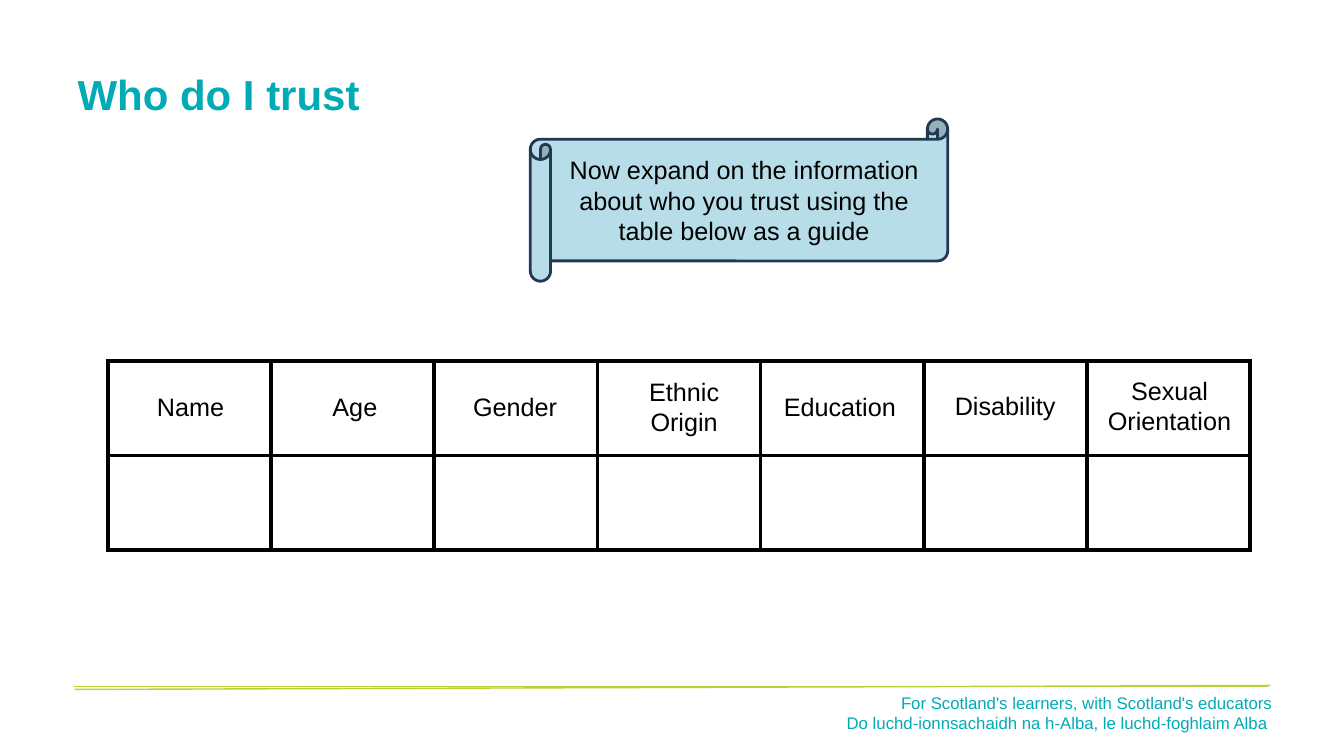
from lxml import etree
from pptx import Presentation
from pptx.dml.color import RGBColor
from pptx.enum import shapes, text
from pptx.oxml import ns
from pptx.util import Inches, Pt

TEAL = RGBColor(0x00, 0xAB, 0xB5)
LIME = RGBColor(0xB3, 0xD2, 0x36)
SKY = RGBColor(0xB7, 0xDE, 0xE8)
NAVY = RGBColor(0x23, 0x39, 0x53)
BLACK = RGBColor(0, 0, 0)
WHITE = RGBColor(0xFF, 0xFF, 0xFF)


def write(sp, lines, align, color, **fmt):
    tf = sp.text_frame
    tf.word_wrap = True
    tf.text = "\n".join(lines)
    for p in tf.paragraphs:
        p.alignment = align
        for r in p.runs:
            r.font.color.rgb = color
            for key, value in {"name": "Arial", "bold": False, **fmt}.items():
                setattr(r.font, key, value)
    return tf


prs = Presentation()
prs.slide_width, prs.slide_height = Inches(13.33), Inches(7.5)
s = prs.slides.add_slide(prs.slide_layouts[5])

for x1, y1, x2, y2, width in [(0.74, 6.84, 12.6, 6.8, 1), (0.73, 6.81, 12.58, 6.81, 0.75)]:
    rule = s.shapes.add_connector(
        shapes.MSO_CONNECTOR.STRAIGHT, Inches(x1), Inches(y1), Inches(x2), Inches(y2))
    rule.line.color.rgb = LIME
    rule.line.width = Pt(width)
    etree.SubElement(rule._element.spPr, ns.qn("a:effectLst"))

footer = s.shapes.add_textbox(Inches(8.23), Inches(6.82), Inches(4.49), Inches(0.5))
write(footer, ["For Scotland's learners, with Scotland's educators",
               "Do luchd-ionnsachaidh na h-Alba, le luchd-foghlaim Alba "],
      text.PP_ALIGN.RIGHT, TEAL, size=Pt(12))

title = s.shapes.title
place = {"left": 0.67, "top": 0.3, "width": 12, "height": 1.25}
for key, value in place.items():
    setattr(title, key, Inches(value))
tf = write(title, ["Who do I trust"], text.PP_ALIGN.LEFT, TEAL, size=Pt(30), bold=True)
tf.vertical_anchor = text.MSO_ANCHOR.MIDDLE

table = s.shapes.add_table(
    2, 7, Inches(1.07), Inches(3.58), Inches(11.33), Inches(1.88)).table
table.first_row = table.horz_banding = False
for cell in table.iter_cells():
    tcPr = cell._tc.get_or_add_tcPr()
    for side in ("lnL", "lnR", "lnT", "lnB"):
        ln = etree.SubElement(tcPr, ns.qn("a:" + side), w=str(Pt(3)))
        fill = etree.SubElement(ln, ns.qn("a:solidFill"))
        etree.SubElement(fill, ns.qn("a:srgbClr"), val=str(BLACK))
    cell.fill.solid()
    cell.fill.fore_color.rgb = WHITE

headings = [
    ("Name", 0.39, 3.83, 3, 0.4),
    ("Age", 2.02, 3.83, 3, 0.4),
    ("Gender", 3.61, 3.83, 3, 0.4),
    ("Ethnic Origin", 6.14, 3.68, 1.29, 0.71),
    ("Education", 7.51, 3.83, 1.64, 0.42),
    ("Disability", 9.25, 3.82, 1.44, 0.42),
    ("Sexual Orientation", 10.75, 3.67, 1.7, 0.71),
]
for heading, *box in headings:
    sp = s.shapes.add_textbox(*map(Inches, box))
    write(sp, [heading], text.PP_ALIGN.CENTER, BLACK, size=Pt(18))

scroll = s.shapes.add_shape(
    shapes.MSO_SHAPE.HORIZONTAL_SCROLL, Inches(5.26), Inches(1.18), Inches(4.14), Inches(1.61))
scroll.shadow.inherit = False
scroll.fill.solid()
scroll.fill.fore_color.rgb = SKY
scroll.line.color.rgb = NAVY
scroll.line.width = Pt(2)
tf = write(scroll, ["Now expand on the information about who you trust using the table below as a guide"],
           text.PP_ALIGN.CENTER, BLACK, size=Pt(18))
tf.vertical_anchor = text.MSO_ANCHOR.MIDDLE

prs.save("out.pptx")
